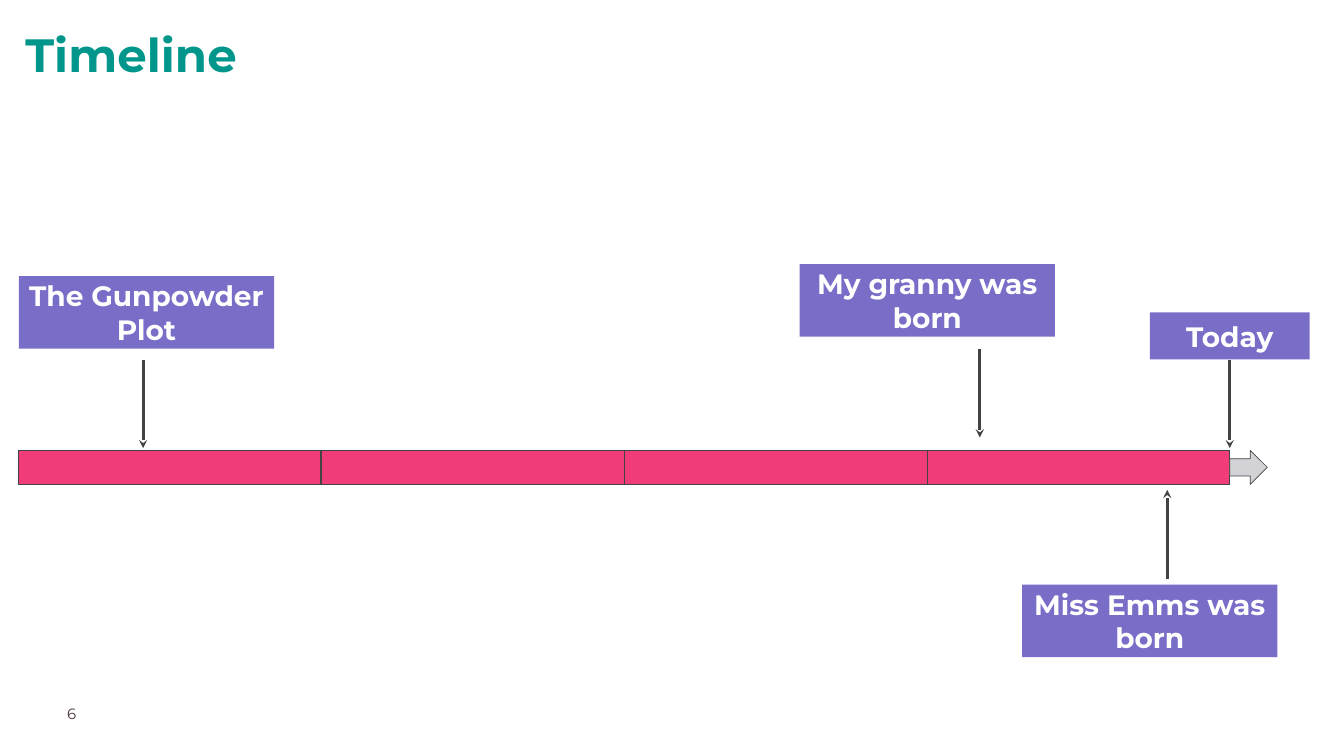
from lxml import etree
from pptx import Presentation
from pptx import util as u
from pptx.dml.color import RGBColor
from pptx.enum import shapes, text
from pptx.oxml.ns import qn

PX = 9144  # EMU per px, 100 px to the inch
FONT = "Montserrat"
TEAL = RGBColor(0x00, 0x96, 0x8C)
PLUM = RGBColor(0x4B, 0x32, 0x41)
PURPLE = RGBColor(0x78, 0x6E, 0xC8)
PINK = RGBColor(0xF0, 0x3C, 0x78)
GREY = RGBColor(0xD2, 0xD2, 0xD7)
DARK = RGBColor(0x43, 0x43, 0x43)
WHITE = RGBColor(0xFF, 0xFF, 0xFF)

TITLE = "Timeline"
PAGE_NUMBER = "6"
# label, box (left, top, width, height), arrow x, arrow start y, arrow tip y
EVENTS = [
    ("The Gunpowder Plot", (28, 411, 380, 108), 213, 535, 667),
    ("My granny was born", (1190, 393, 380, 108), 1458, 519, 651),
    ("Miss Emms was born", (1521, 870, 380, 108), 1737, 862, 729),
    ("Today", (1711, 465, 238, 70), 1830, 535, 667),
]
BAR_LEFT, BAR_RIGHT, BAR_TOP, BAR_HEIGHT = 28, 1830, 670, 51
CENTURIES = 4
ARROW_WIDTH = 56


def px(*lengths):
    return [u.Emu(length * PX) for length in lengths]


def write(shape, words, size, color, bold=False, inset=10):
    frame = shape.text_frame
    frame.word_wrap = True
    frame.margin_left = frame.margin_top = u.Emu(inset * PX)
    frame.margin_right = frame.margin_bottom = u.Emu(inset * PX)
    para = frame.paragraphs[0]
    para.text = words
    para.font.name, para.font.size = FONT, u.Pt(size)
    para.font.bold, para.font.color.rgb = bold, color
    return para


def add_block(page, kind, box, fill, line_width=0):
    """Add a filled shape, outlined only when a line width is given."""
    block = page.shapes.add_shape(kind, *px(*box))
    block.shadow.inherit = False
    block.fill.solid()
    block.fill.fore_color.rgb = fill
    if line_width:
        block.line.color.rgb = DARK
        block.line.width = u.Pt(line_width)
    else:
        block.line.fill.background()
    return block


def add_arrow(page, x, start, tip):
    arrow = page.shapes.add_connector(
        shapes.MSO_CONNECTOR.STRAIGHT, *px(x, start, x, tip))
    arrow.line.color.rgb = DARK
    arrow.line.width = u.Pt(3)
    etree.SubElement(arrow.line._get_or_add_ln(), qn("a:tailEnd"), type="stealth")
    etree.SubElement(arrow._element.spPr, qn("a:effectLst"))
    return arrow


def add_event(page, label, box, x, start, tip):
    block = add_block(page, shapes.MSO_SHAPE.RECTANGLE, box, PURPLE)
    block.text_frame.vertical_anchor = text.MSO_ANCHOR.MIDDLE
    write(block, label, 30, WHITE, bold=True).alignment = text.PP_ALIGN.CENTER
    arrow = add_arrow(page, x, start, tip)
    left, top, width, height = box
    if (x, start) == (left + width // 2, top + height):
        arrow.begin_connect(block, 2)


def add_bar(page):
    step = (BAR_RIGHT - BAR_LEFT) / CENTURIES
    for century in range(CENTURIES):
        left = round(BAR_LEFT + century * step)
        right = round(BAR_LEFT + (century + 1) * step)
        add_block(page, shapes.MSO_SHAPE.RECTANGLE,
                  (left, BAR_TOP, right - left, BAR_HEIGHT), PINK, 1.5)
    add_block(page, shapes.MSO_SHAPE.RIGHT_ARROW,
              (BAR_RIGHT, BAR_TOP, ARROW_WIDTH, BAR_HEIGHT), GREY, 0.75)


def main():
    deck = Presentation()
    deck.slide_width, deck.slide_height = px(2000, 1125)
    page = deck.slides.add_slide(deck.slide_layouts[6])
    number = page.shapes.add_textbox(*px(100, 1048, 157, 39))
    write(number, PAGE_NUMBER, 16, PLUM, inset=0)
    title = page.shapes.add_textbox(*px(28, 29, 360, 125))
    write(title, TITLE, 50, TEAL, bold=True)
    add_bar(page)
    for event in EVENTS:
        add_event(page, *event)
    deck.save("out.pptx")


if __name__ == "__main__":
    main()
